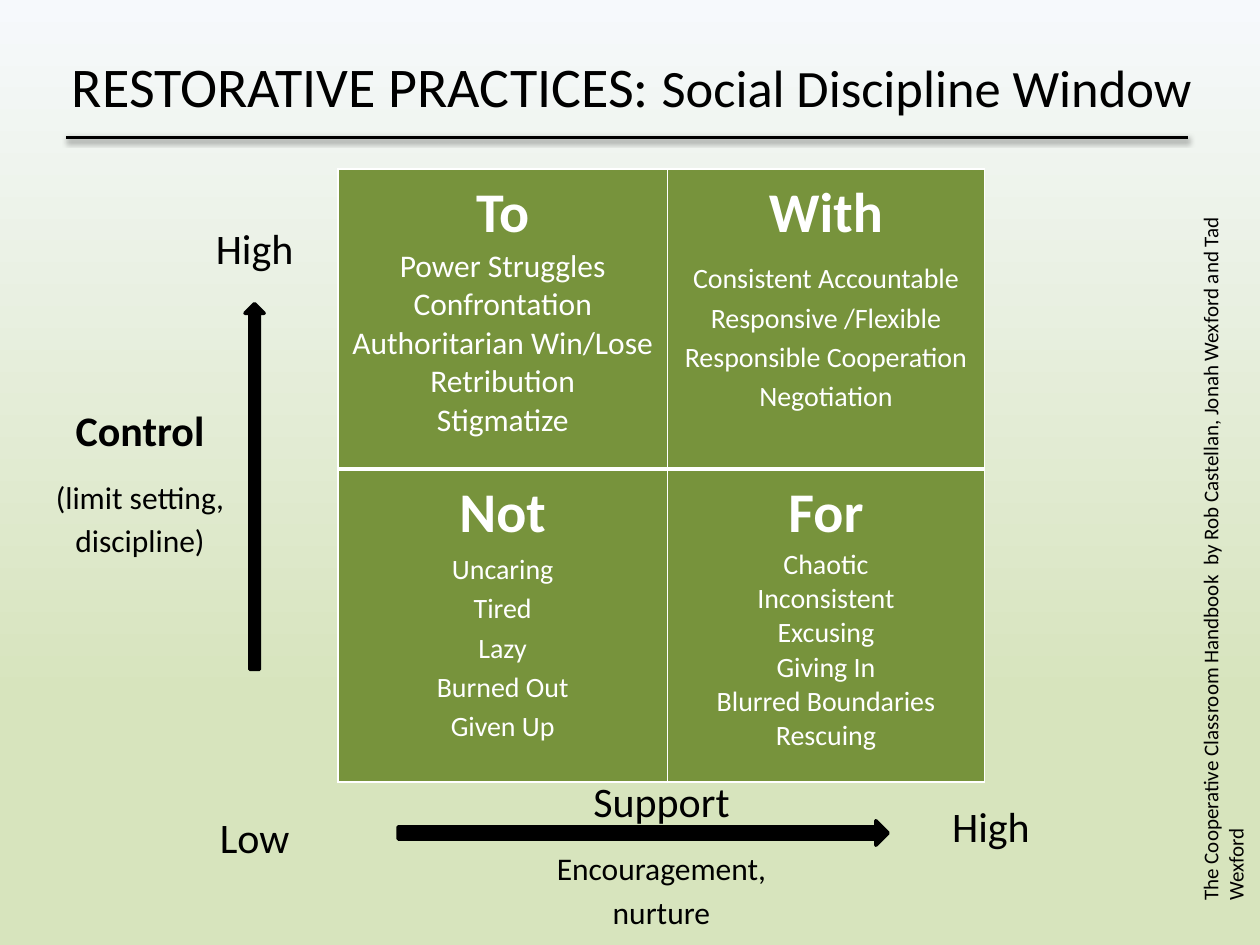
from dataclasses import dataclass

from lxml.etree import SubElement
from pptx import Presentation
from pptx.dml.color import RGBColor
from pptx.enum.shapes import MSO_CONNECTOR, MSO_SHAPE
from pptx.enum.text import MSO_ANCHOR, PP_ALIGN
from pptx.oxml.ns import qn
from pptx.util import Pt

BLACK = RGBColor(0x00, 0x00, 0x00)
WHITE = RGBColor(0xFF, 0xFF, 0xFF)
OLIVE = RGBColor(0x77, 0x93, 0x3C)
SKY = RGBColor(0xF6, 0xF9, 0xFC)
LEAF = RGBColor(0xD7, 0xE4, 0xBD)
FONT = "Calibri"


@dataclass
class Line:
    text: str
    size: float
    bold: bool = False
    spacing: float = 1.15
    before: float = 0


@dataclass
class Label:
    left: float
    top: float
    width: float
    height: float
    lines: list[Line]
    rotation: float = 0
    align: PP_ALIGN = PP_ALIGN.CENTER
    after: float = 10


@dataclass
class Arrow:
    kind: MSO_SHAPE
    left: float
    top: float
    width: float
    height: float


def quadrant(heading: str, items: list[str], size: float, spacing: float, before: float = 0) -> list[Line]:
    lines = [Line(heading, 32, True)] + [Line(item, size, False, spacing) for item in items]
    lines[1].before = before
    return lines


QUADRANTS = [
    [
        quadrant("To", ["Power Struggles", "Confrontation Authoritarian Win/Lose Retribution", "Stigmatize"], 18, 1),
        quadrant("With", ["Consistent Accountable Responsive /Flexible", "Responsible Cooperation Negotiation"], 16, 1.15, 5.5),
    ],
    [
        quadrant("Not", ["Uncaring", "Tired", "Lazy", "Burned Out", "Given Up"], 16, 1.15),
        quadrant("For", ["Chaotic", "Inconsistent", "Excusing", "Giving In", "Blurred Boundaries Rescuing"], 16, 1),
    ],
]
COLUMN_WIDTHS = [188.5, 181]
ROW_HEIGHTS = [171.5, 179]

LABELS = [
    Label(114.5, 119, 62, 42.5, [Line("High", 24)]),
    Label(114.5, 456, 62, 42.5, [Line("Low", 24)]),
    Label(532, 449.5, 68.5, 36.5, [Line("High", 24)]),
    Label(20, 223, 120, 109.5, [Line("Control", 24, True), Line("(limit setting, discipline)", 18)]),
    Label(288, 435.5, 180, 104, [Line("Support", 24), Line("Encouragement, nurture", 18)]),
    Label(
        468.5, 288, 446, 21.5,
        [Line("The Cooperative Classroom Handbook  by Rob Castellan, Jonah Wexford and Tad Wexford", 12, spacing=1)],
        270, PP_ALIGN.LEFT, 0,
    ),
]

ARROWS = [
    Arrow(MSO_SHAPE.UP_ARROW, 140, 173.5, 11, 209),
    Arrow(MSO_SHAPE.RIGHT_ARROW, 227.5, 469, 280, 14),
]


def write_lines(frame, lines: list[Line], color: RGBColor, align: PP_ALIGN, after: float) -> None:
    """Fill a text frame with one paragraph per line."""
    for index, line in enumerate(lines):
        para = frame.add_paragraph() if index else frame.paragraphs[0]
        para.text = line.text
        para.alignment = align
        para.line_spacing = line.spacing
        para.space_before, para.space_after = Pt(line.before), Pt(after)
        font = para.font
        font.name, font.size, font.bold = FONT, Pt(line.size), line.bold
        font.color.rgb = color


def paint_background(page) -> None:
    """Fade the page from sky to leaf, top to bottom."""
    fill = page.background.fill
    fill.gradient()
    fill.gradient_angle = 270
    for stop, color, position in zip(fill.gradient_stops, (SKY, LEAF), (0, 0.74)):
        stop.color.rgb = color
        stop.position = position


def add_title(page) -> None:
    """Write the title in two sizes."""
    box = page.shapes.add_textbox(Pt(34), Pt(3.5), Pt(667), Pt(90))
    frame = box.text_frame
    frame.word_wrap = True
    frame.vertical_anchor = MSO_ANCHOR.MIDDLE
    para = frame.paragraphs[0]
    para.font.name = FONT
    para.font.color.rgb = BLACK
    for text, size in (("RESTORATIVE PRACTICES:", 32), (" Social Discipline Window", 30)):
        span = para.add_run()
        span.text = text
        span.font.size = Pt(size)


def add_rule(page) -> None:
    """Draw the shadowed line below the title."""
    rule = page.shapes.add_connector(MSO_CONNECTOR.STRAIGHT, Pt(38), Pt(78.5), Pt(679), Pt(78.5))
    rule.line.color.rgb = BLACK
    rule.line.width = Pt(2)
    effects = SubElement(rule.element.spPr, qn("a:effectLst"))
    shadow = SubElement(
        effects, qn("a:outerShdw"), blurRad=str(Pt(3.1)), dist=str(Pt(1.6)), dir="5400000", rotWithShape="0"
    )
    color = SubElement(shadow, qn("a:srgbClr"), val=str(BLACK))
    SubElement(color, qn("a:alpha"), val="38000")


def set_borders(cell, top: float, bottom: float) -> None:
    """Give a cell white borders, one point wide at the sides."""
    properties = cell._tc.get_or_add_tcPr()
    for tag, width in (("a:lnL", 1), ("a:lnR", 1), ("a:lnT", top), ("a:lnB", bottom)):
        border = SubElement(properties, qn(tag), w=str(Pt(width)))
        fill = SubElement(border, qn("a:solidFill"))
        SubElement(fill, qn("a:srgbClr"), val=str(WHITE))


def add_window(page) -> None:
    """Build the table of four quadrants."""
    frame = page.shapes.add_table(2, 2, Pt(193), Pt(96.5), Pt(sum(COLUMN_WIDTHS)), Pt(sum(ROW_HEIGHTS)))
    table = frame.table
    for column, width in zip(table.columns, COLUMN_WIDTHS):
        column.width = Pt(width)
    for row_index, (row, height) in enumerate(zip(table.rows, ROW_HEIGHTS)):
        row.height = Pt(height)
        for cell, lines in zip(row.cells, QUADRANTS[row_index]):
            set_borders(cell, *((3, 1) if row_index else (1, 3)))
            cell.fill.solid()
            cell.fill.fore_color.rgb = OLIVE
            cell.margin_left = cell.margin_right = Pt(5)
            cell.margin_top = cell.margin_bottom = 0
            write_lines(cell.text_frame, lines, WHITE, PP_ALIGN.CENTER, 0)


def add_arrow(page, arrow: Arrow) -> None:
    """Draw a solid black axis arrow."""
    shape = page.shapes.add_shape(arrow.kind, Pt(arrow.left), Pt(arrow.top), Pt(arrow.width), Pt(arrow.height))
    shape.shadow.inherit = False
    shape.fill.solid()
    shape.fill.fore_color.rgb = BLACK
    shape.line.color.rgb = BLACK
    shape.line.width = Pt(2)


def add_label(page, label: Label) -> None:
    """Place a wrapped text box."""
    box = page.shapes.add_textbox(Pt(label.left), Pt(label.top), Pt(label.width), Pt(label.height))
    box.rotation = label.rotation
    box.text_frame.word_wrap = True
    write_lines(box.text_frame, label.lines, BLACK, label.align, label.after)


def main() -> None:
    """Build the slide and save the deck."""
    deck = Presentation()
    deck.slide_width, deck.slide_height = Pt(720), Pt(540)
    page = deck.slides.add_slide(deck.slide_layouts[6])
    paint_background(page)
    add_title(page)
    add_window(page)
    for arrow in ARROWS:
        add_arrow(page, arrow)
    for label in LABELS:
        add_label(page, label)
    add_rule(page)
    deck.save("out.pptx")


if __name__ == "__main__":
    main()
